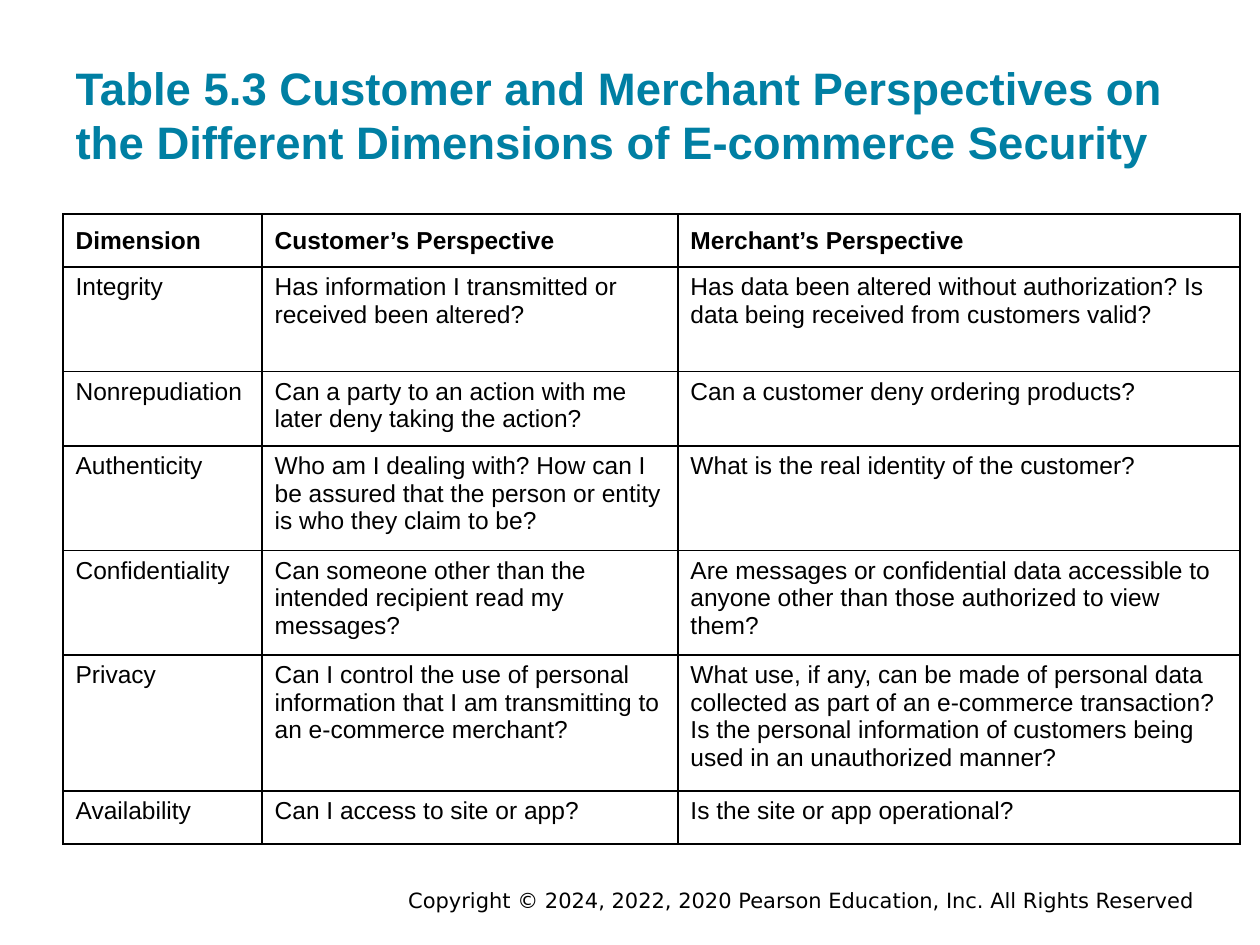
from lxml.etree import SubElement
from pptx import Presentation
from pptx.dml.color import RGBColor
from pptx.enum.text import MSO_ANCHOR, MSO_AUTO_SIZE, PP_ALIGN
from pptx.oxml.ns import qn
from pptx.util import Emu, Pt

# Content
TITLE = ("Table 5.3 Customer and Merchant Perspectives on "
         "the Different Dimensions of E-commerce Security")
ROWS = [
    ("Dimension", "Customer’s Perspective", "Merchant’s Perspective"),
    ("Integrity", "Has information I transmitted or\nreceived been altered?",
     "Has data been altered without authorization? Is data being received "
     "from customers valid?"),
    ("Nonrepudiation",
     "Can a party to an action with me later deny taking the action?",
     "Can a customer deny ordering products?"),
    ("Authenticity",
     "Who am I dealing with? How can I be assured that the person or entity "
     "is who they claim to be?",
     "What is the real identity of the customer?"),
    ("Confidentiality",
     "Can someone other than the intended recipient read my messages?",
     "Are messages or confidential data accessible to anyone other than "
     "those authorized to view them?"),
    ("Privacy",
     "Can I control the use of personal information that I am transmitting "
     "to an e-commerce merchant?",
     "What use, if any, can be made of personal data collected as part of an "
     "e-commerce transaction? Is the personal information of customers being "
     "used in an unauthorized manner?"),
    ("Availability", "Can I access to site or app?",
     "Is the site or app operational?"),
]
COPYRIGHT = ("Copyright © 2024, 2022, 2020 Pearson Education, Inc. "
             "All Rights Reserved")

# Layout in px, 100 to the inch
COL_WIDTHS = [158, 330, 446]
ROW_HEIGHTS = [42, 83, 59, 83, 83, 108, 42]
COLORS = {"title": "007FA3", "text": "000000", "border": "000000"}


def px(n):
    return Emu(n * 9144)


def place(sp, left, top, width, height):
    sp.left, sp.top, sp.width, sp.height = map(px, (left, top, width, height))


def write(tf, text, size=14, font="Arial", color="text", bold=False,
          align=PP_ALIGN.LEFT):
    for i, line in enumerate(text.split("\n")):
        p = tf.paragraphs[0] if i == 0 else tf.add_paragraph()
        p.alignment = align
        r = p.add_run()
        r.text = line
        r.font.size = Pt(size)
        r.font.name = font
        r.font.bold = bold
        r.font.color.rgb = RGBColor.from_string(COLORS[color])


def add_borders(cell):
    tcPr = cell._tc.get_or_add_tcPr()
    for i, side in enumerate(("a:lnL", "a:lnR", "a:lnT", "a:lnB")):
        ln = SubElement(tcPr, qn(side), w=str(Pt(1)))
        fill = SubElement(ln, qn("a:solidFill"))
        SubElement(fill, qn("a:srgbClr"), val=COLORS["border"])
        tcPr.remove(ln)
        tcPr.insert(i, ln)  # borders come before the cell fill


prs = Presentation()
prs.slide_width, prs.slide_height = px(1000), px(750)
s = prs.slides.add_slide(prs.slide_layouts[5])

# Title
title = s.shapes.title
place(title, 50, 24, 900, 120)
tf = title.text_frame
tf.auto_size = MSO_AUTO_SIZE.NONE
tf.vertical_anchor = MSO_ANCHOR.BOTTOM
tf.margin_left = tf.margin_right = tf.margin_top = tf.margin_bottom = px(10)
write(tf, TITLE, size=26, color="title", bold=True)

# Perspectives table
table = s.shapes.add_table(
    len(ROWS), len(COL_WIDTHS), px(50), px(170),
    px(sum(COL_WIDTHS)), px(sum(ROW_HEIGHTS))).table
for col, width in zip(table.columns, COL_WIDTHS):
    col.width = px(width)
for i, (row, height, texts) in enumerate(zip(table.rows, ROW_HEIGHTS, ROWS)):
    row.height = px(height)
    header = i == 0
    for cell, text in zip(row.cells, texts):
        cell.fill.background()
        cell.vertical_anchor = MSO_ANCHOR.MIDDLE if header else MSO_ANCHOR.TOP
        write(cell.text_frame, text, bold=header)
        add_borders(cell)

# Copyright line
box = s.shapes.add_textbox(px(175), px(703), px(783), px(22))
tf = box.text_frame
tf.word_wrap = True
tf.vertical_anchor = MSO_ANCHOR.MIDDLE
write(tf, COPYRIGHT, size=12, font="DejaVu Sans", align=PP_ALIGN.RIGHT)

prs.save("out.pptx")
